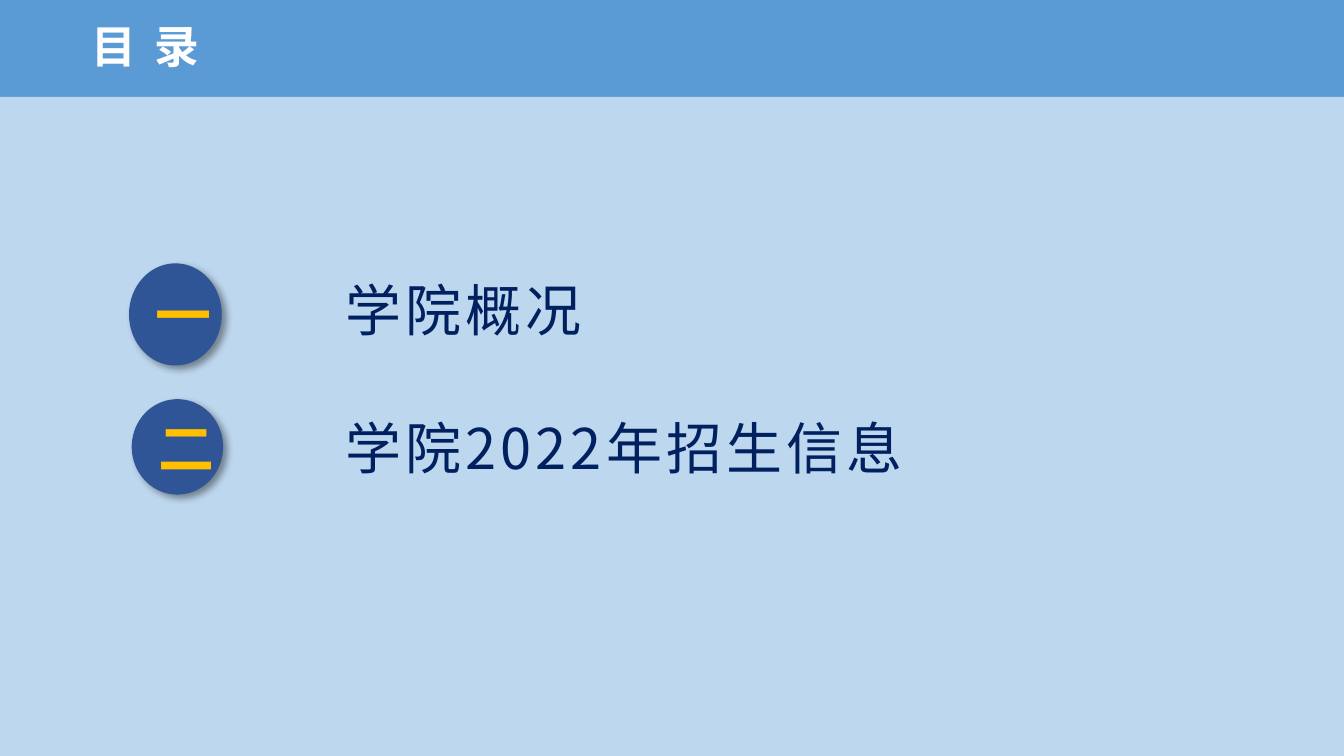
from lxml import etree
from pptx import Presentation
from pptx import util as u
from pptx.dml.color import RGBColor
from pptx.enum import shapes, text
from pptx.oxml.ns import qn

HEADER_BLUE = RGBColor(0x5B, 0x9B, 0xD5)
PANEL_BLUE = RGBColor(0xBD, 0xD7, 0xEE)
BADGE_BLUE = RGBColor(0x2F, 0x55, 0x97)
NAVY = RGBColor(0x00, 0x20, 0x60)
GOLD = RGBColor(0xFF, 0xC0, 0x00)
WHITE = RGBColor(0xFF, 0xFF, 0xFF)
FONT = "Noto Sans CJK SC"
SLIDE_WIDTH = 10
SLIDE_HEIGHT = SLIDE_WIDTH * 9 / 16

ENTRIES = [
    ("一", (0.96, 1.96, 0.69, 0.76), "学院概况", (2.47, 2, 3.14, 0.61)),
    ("二", (0.98, 2.97, 0.68, 0.71), "学院2022年招生信息", (2.47, 3.03, 7.19, 0.61)),
]


def set_values(target, values):
    for name, value in values.items():
        setattr(target, name, value)


def write(shape, words, color, size, align, bold=False, spacing=0, **frame_values):
    frame = shape.text_frame
    set_values(frame, {"word_wrap": True, **frame_values})
    para = frame.paragraphs[0]
    para.alignment = align
    span = para.add_run()
    span.text = words
    set_values(span.font, {"name": FONT, "size": u.Pt(size), "bold": bold})
    span.font.color.rgb = color
    properties = span.font._element
    properties.set("spc", str(round(spacing * 100)))
    etree.SubElement(properties, qn("a:ea"), typeface=FONT)


def add_filled(page, kind, place, color):
    shape = page.shapes.add_shape(kind, *map(u.Inches, place))
    shape.fill.solid()
    shape.fill.fore_color.rgb = color
    shape.line.fill.background()
    shape.shadow.inherit = False
    return shape


def add_shadow(shape):
    effects = shape._element.spPr.find(qn("a:effectLst"))
    shadow = etree.SubElement(
        effects, qn("a:outerShdw"), blurRad=str(u.Pt(4)), dist=str(u.Pt(3)),
        dir=str(45 * 60000), algn="tl", rotWithShape="0")
    color = etree.SubElement(shadow, qn("a:srgbClr"), val="000000")
    etree.SubElement(color, qn("a:alpha"), val="40000")


def add_title(page, words):
    title = page.shapes.title
    place = zip(("left", "top", "width", "height"), (0.61, 0.06, 5.56, 0.56))
    set_values(title, {name: u.Inches(value) for name, value in place})
    write(title, words, WHITE, 24, text.PP_ALIGN.LEFT, bold=True, spacing=2.2,
          vertical_anchor=text.MSO_ANCHOR.MIDDLE, auto_size=text.MSO_AUTO_SIZE.NONE,
          margin_left=u.Inches(0.07), margin_right=u.Inches(0.07),
          margin_top=u.Inches(0.04), margin_bottom=u.Inches(0.04))


def add_badge(page, numeral, place):
    badge = add_filled(page, shapes.MSO_SHAPE.OVAL, place, BADGE_BLUE)
    add_shadow(badge)
    write(badge, numeral, GOLD, 30, text.PP_ALIGN.CENTER, bold=True,
          vertical_anchor=text.MSO_ANCHOR.MIDDLE)


def add_heading(page, words, place):
    box = page.shapes.add_textbox(*map(u.Inches, place))
    write(box, words, NAVY, 30, text.PP_ALIGN.LEFT, spacing=2.2,
          auto_size=text.MSO_AUTO_SIZE.SHAPE_TO_FIT_TEXT)


def main():
    deck = Presentation()
    set_values(deck, {"slide_width": u.Inches(SLIDE_WIDTH),
                      "slide_height": u.Inches(SLIDE_HEIGHT)})
    page = deck.slides.add_slide(deck.slide_layouts.get_by_name("Title Only"))
    page.background.fill.solid()
    page.background.fill.fore_color.rgb = HEADER_BLUE
    add_filled(page, shapes.MSO_SHAPE.RECTANGLE, (0, 0.72, 10.02, 4.91), PANEL_BLUE)
    add_title(page, "目 录")
    for numeral, badge_place, heading, heading_place in ENTRIES:
        add_badge(page, numeral, badge_place)
        add_heading(page, heading, heading_place)
    deck.save("out.pptx")


if __name__ == "__main__":
    main()
